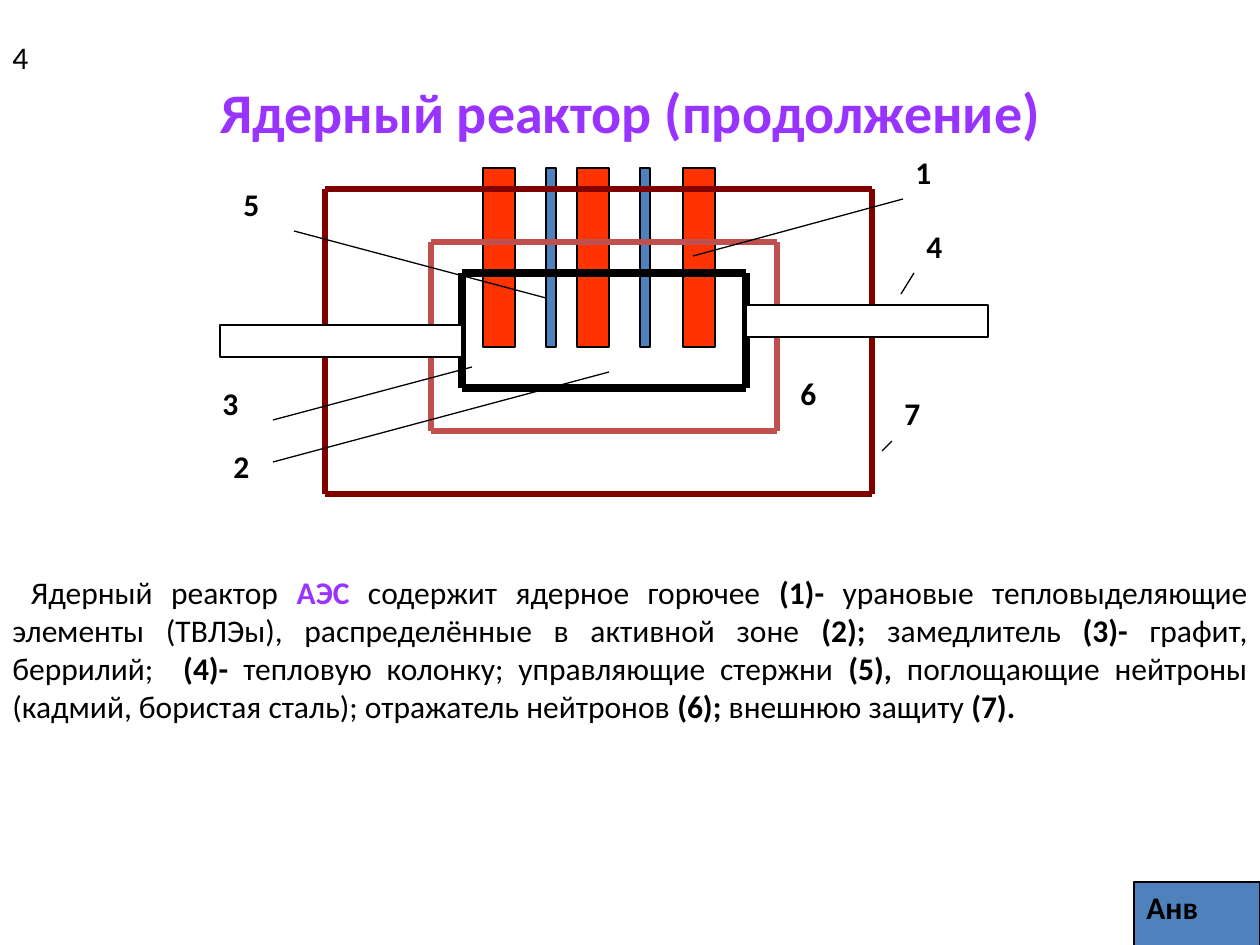
from lxml import etree
from pptx import Presentation
from pptx import util as u
from pptx.dml.color import RGBColor
from pptx.enum import shapes, text
from pptx.oxml.ns import qn

# Content; all lengths in px, 126 px to the inch
SCALE = 914400 / 126
WIDTH, HEIGHT = 1260, 945
FONT = "Calibri"
HEX = {"title": "9933FF", "fuel": "FF3300", "rod": "4F81BD", "shield": "800000",
       "mirror": "C0504D", "ink": "000000", "paper": "FFFFFF"}

TITLE = "Ядерный реактор (продолжение)"
# Plain and bold pieces alternate
BODY = [" Ядерный реактор ", "АЭС", " содержит ядерное горючее ", "(1)-",
        " урановые тепловыделяющие элементы (ТВЛЭы), распределённые в активной зоне ",
        "(2);", " замедлитель ", "(3)-", " графит, беррилий;  ", "(4)-",
        " тепловую колонку; управляющие стержни ", "(5),",
        " поглощающие нейтроны (кадмий, бористая сталь); отражатель нейтронов ",
        "(6);", " внешнюю защиту ", "(7)."]
ACCENT = "АЭС"

# Rods share top and height: colour, width, left edges
ROD_TOP, ROD_TALL = 168, 179
RODS = [("fuel", 32, (483, 577, 683)), ("rod", 10, (546, 640))]
# Frames: colour, line width in pt, left, top, right, bottom
FRAMES = [("shield", 3, 325, 189, 872, 494),
          ("mirror", 3, 431, 242, 777, 431),
          ("ink", 4.5, 462, 273, 746, 388)]
PIPES = [(220, 325), (746, 305)]
PIPE_SIZE = (242, 32)
# Labels: text, left, top
LABELS = [("7", 892, 388), ("6", 788, 368), ("5", 231, 179), ("4", 914, 221),
          ("3", 210, 378), ("2", 221, 441), ("1", 903, 147)]
# Leaders: from x, y to x, y
LEADERS = [(294, 231, 546, 298), (273, 420, 472, 367), (273, 462, 609, 372),
           (903, 199, 693, 256), (914, 273, 901, 294), (892, 441, 882, 451)]


def px(*vals):
    return [u.Emu(round(v * SCALE)) for v in vals]


def hue(name):
    return RGBColor.from_string(HEX[name])


def style(font, bold=None, size=18, tint="ink"):
    font.name, font.size, font.bold = FONT, u.Pt(size), bold
    font.color.rgb = hue(tint)


def bar(x, y, w, h, fill):
    box = slide.shapes.add_shape(shapes.MSO_SHAPE.RECTANGLE, *px(x, y, w, h))
    box.shadow.inherit = False
    box.fill.solid()
    box.fill.fore_color.rgb = hue(fill)
    box.line.color.rgb = hue("ink")
    box.line.width = u.Pt(0.75)
    return box


def line(x1, y1, x2, y2, tint="ink", width=0.75):
    link = slide.shapes.add_connector(
        shapes.MSO_CONNECTOR.STRAIGHT, *px(x1, y1, x2, y2))
    link.line.color.rgb = hue(tint)
    link.line.width = u.Pt(width)
    etree.SubElement(link._element.spPr, qn("a:effectLst"))


def note(words, x, y, w, h, bold=None):
    frame = slide.shapes.add_textbox(*px(x, y, w, h)).text_frame
    frame.word_wrap = True
    para = frame.paragraphs[0]
    para.text = words
    style(para.font, bold)
    return para


deck = Presentation()
deck.slide_width, deck.slide_height = px(WIDTH, HEIGHT)
slide = deck.slides.add_slide(deck.slide_layouts[5])

# Title
head = slide.shapes.title
head.left, head.top, head.width, head.height = px(95, 53, 1071, 116)
head.text_frame.text = TITLE
head.text_frame.vertical_anchor = text.MSO_ANCHOR.MIDDLE
para = head.text_frame.paragraphs[0]
para.alignment = text.PP_ALIGN.CENTER
style(para.font, True, 32, "title")

# Fuel and control rods
for fill, wide, lefts in RODS:
    for x in lefts:
        bar(x, ROD_TOP, wide, ROD_TALL, fill)

# Shield, reflector and moderator frames
for tint, width, x1, y1, x2, y2 in FRAMES:
    ends = [(x1, y2), (x1, y1), (x2, y1), (x2, y2)]
    for a, b in zip(ends, ends[1:] + ends[:1]):
        line(*a, *b, tint, width)

# Pipes, labels and leaders
for x, y in PIPES:
    bar(x, y, *PIPE_SIZE, "paper")
for words, x, y in LABELS:
    note(words, x, y, 63, 63, True)
for ends in LEADERS:
    line(*ends)

# Description
para = note("", 0, 567, WIDTH, 315)
para.alignment = text.PP_ALIGN.JUSTIFY
for i, words in enumerate(BODY):
    run = para.add_run()
    run.text = words
    if i % 2:
        run.font.bold = True
    if words == ACCENT:
        run.font.color.rgb = hue("title")

# Slide number and corner mark
note("4", 0, 32, 53, 63)
mark = bar(1134, 882, 126, 64, "rod").text_frame
mark.text = "Анв"
mark.vertical_anchor = text.MSO_ANCHOR.TOP
mark.paragraphs[0].alignment = text.PP_ALIGN.LEFT
style(mark.paragraphs[0].font, True)

deck.save("out.pptx")
